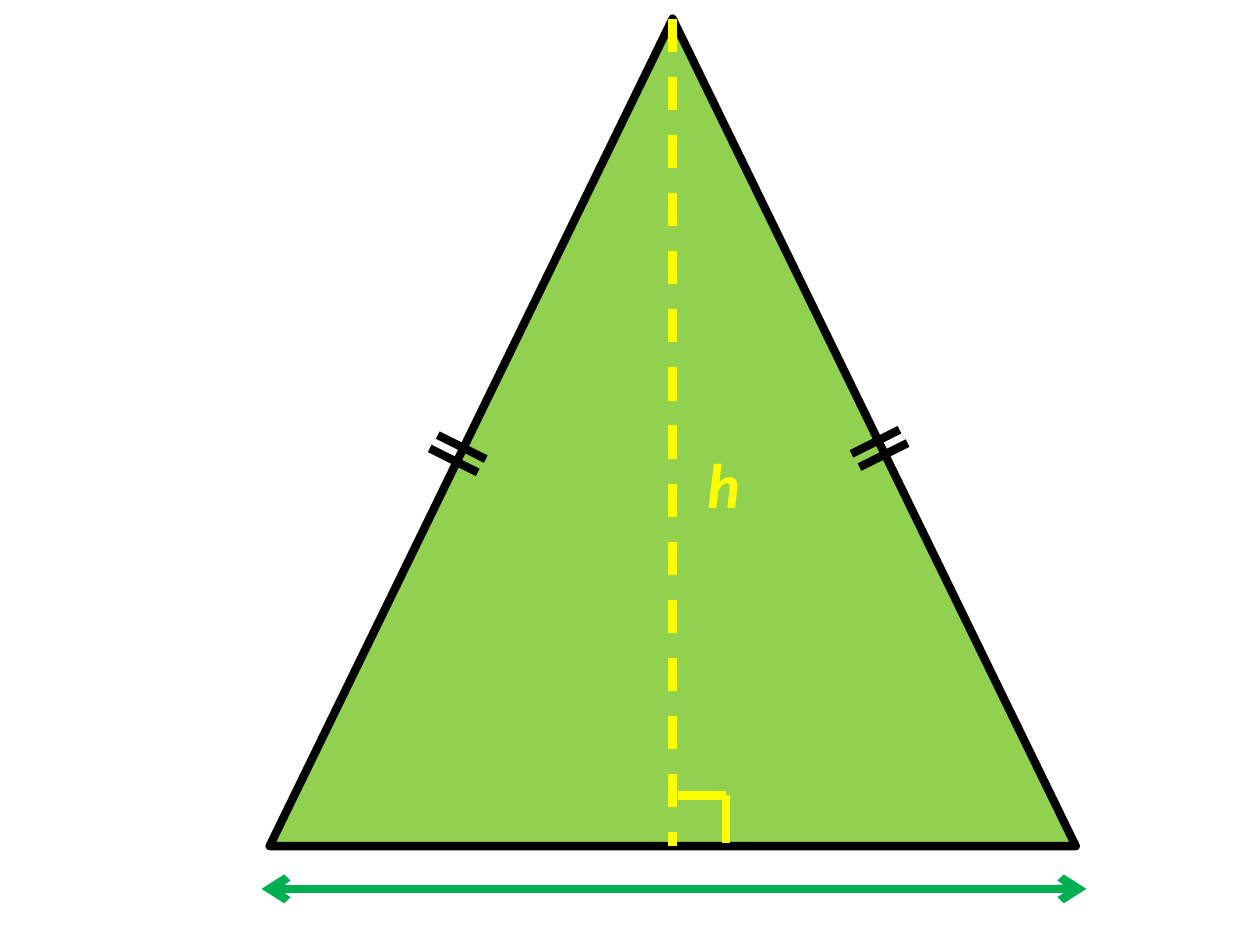
from dataclasses import dataclass

from lxml import etree
from pptx import Presentation
from pptx.dml.color import RGBColor
from pptx.enum.dml import MSO_LINE
from pptx.enum.shapes import MSO_CONNECTOR, MSO_SHAPE
from pptx.enum.text import MSO_AUTO_SIZE
from pptx.oxml.ns import qn
from pptx.util import Pt

PX = 9144
STROKE = Pt(2.25)
DASH = MSO_LINE.DASH
STRAIGHT = MSO_CONNECTOR.STRAIGHT
TRIANGLE = MSO_SHAPE.ISOSCELES_TRIANGLE
FIT = MSO_AUTO_SIZE.SHAPE_TO_FIT_TEXT
COLORS = {
    "fill": "92D050",
    "edge": "000000",
    "height": "FFFF00",
    "base": "00B050",
}


@dataclass(frozen=True)
class Line:
    x1: int
    y1: int
    x2: int
    y2: int
    color: str
    dashed: bool = False
    arrows: bool = False


HEIGHT = [Line(252, 7, 252, 317, "height", dashed=True)]
BASE = [Line(98, 333, 407, 333, "base", arrows=True)]
LEFT_TICKS = [Line(x, y, x + 18, y + 9, "edge") for x, y in ((164, 163), (161, 168))]
RIGHT_TICKS = [Line(x, y, x - 18, y + 9, "edge") for x, y in ((337, 161), (340, 166))]
CORNER = [
    Line(254, 298, 272, 298, "height"),
    Line(272, 298, 272, 316, "height"),
]


def rgb(name: str) -> RGBColor:
    return RGBColor.from_string(COLORS[name])


def draw_line(shapes, line: Line) -> None:
    ends = (line.x1, line.y1, line.x2, line.y2)
    shape = shapes.add_connector(STRAIGHT, *(value * PX for value in ends))
    shape.line.color.rgb = rgb(line.color)
    shape.line.width = STROKE
    if line.dashed:
        shape.line.dash_style = DASH
    if line.arrows:
        for end in ("a:headEnd", "a:tailEnd"):
            etree.SubElement(shape.line._get_or_add_ln(), qn(end), type="arrow")
    etree.SubElement(shape._element.spPr, qn("a:effectLst"))


def draw_triangle(shapes) -> None:
    shape = shapes.add_shape(TRIANGLE, 101 * PX, 7 * PX, 302 * PX, 310 * PX)
    shape.shadow.inherit = False
    shape.fill.solid()
    shape.fill.fore_color.rgb = rgb("fill")
    shape.line.color.rgb = rgb("edge")
    shape.line.width = STROKE


def draw_label(shapes) -> None:
    box = shapes.add_textbox(255 * PX, 162 * PX, 33 * PX, 39 * PX)
    frame = box.text_frame
    frame.word_wrap = False
    frame.auto_size = FIT
    label = frame.paragraphs[0]
    label.text = "h"
    label.font.name = "Calibri"
    label.font.size = Pt(17)
    label.font.bold = True
    label.font.italic = True
    label.font.color.rgb = rgb("height")


def main() -> None:
    deck = Presentation()
    deck.slide_width = 472 * PX
    deck.slide_height = 354 * PX
    shapes = deck.slides.add_slide(deck.slide_layouts[6]).shapes
    draw_triangle(shapes)
    for line in HEIGHT + BASE:
        draw_line(shapes, line)
    draw_label(shapes)
    for marks in (LEFT_TICKS, RIGHT_TICKS, CORNER):
        group = shapes.add_group_shape()
        for line in marks:
            draw_line(group.shapes, line)
    deck.save("out.pptx")


if __name__ == "__main__":
    main()
